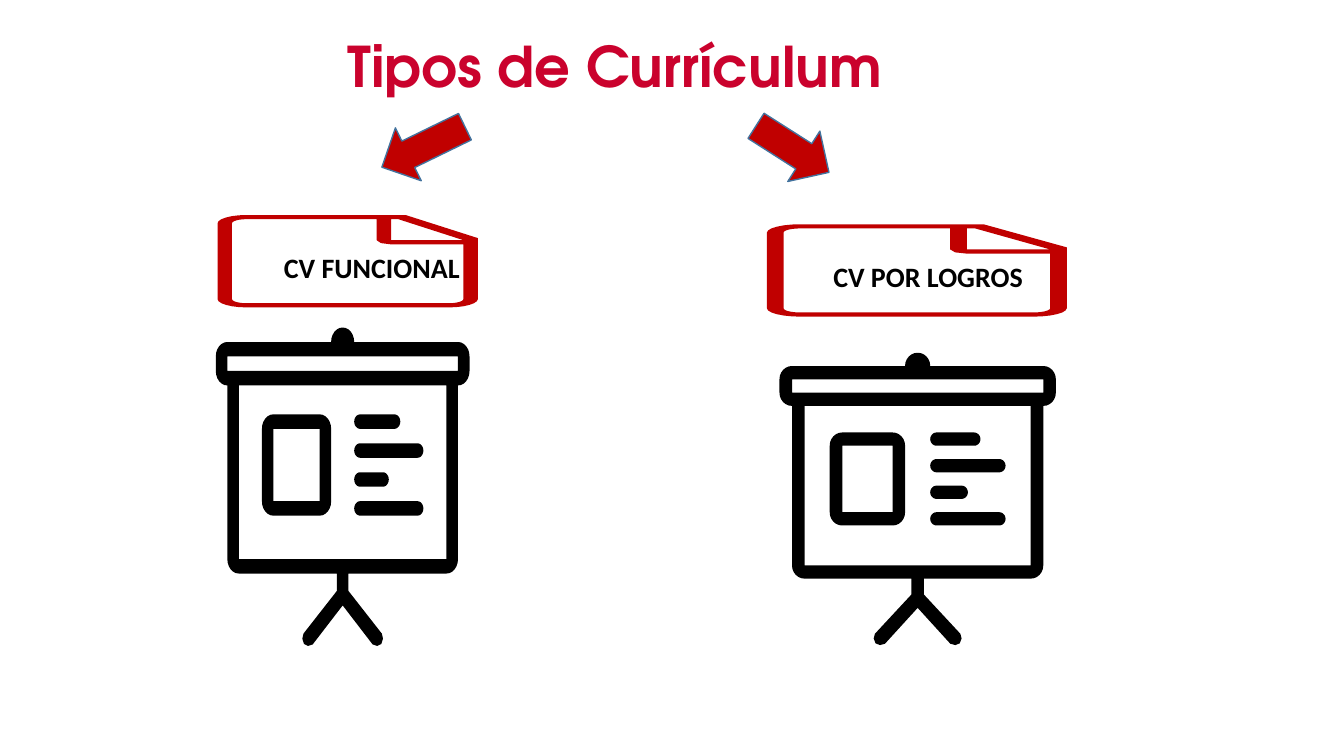
from math import cos, pi, sin

from pptx import Presentation
from pptx.dml.color import RGBColor
from pptx.enum.shapes import MSO_SHAPE
from pptx.enum.text import MSO_ANCHOR, PP_ALIGN
from pptx.util import Emu, Pt

RECT, ARROW = MSO_SHAPE.RECTANGLE, MSO_SHAPE.DOWN_ARROW
TOP, MIDDLE = MSO_ANCHOR.TOP, MSO_ANCHOR.MIDDLE
LEFT, CENTER = PP_ALIGN.LEFT, PP_ALIGN.CENTER

BLACK = RGBColor(0x00, 0x00, 0x00)
WHITE = RGBColor(0xFF, 0xFF, 0xFF)
RED = RGBColor(0xC0, 0x00, 0x00)
ROSE = RGBColor(0xCA, 0x02, 0x2D)
BLUE = RGBColor(0x43, 0x73, 0x9E)

CELL, COLS, ROWS = 76200, 160, 90
FINE = 100
NW, NE, SE, SW = 180, 270, 0, 90

TITLE = {"name": "TeX Gyre Adventor", "size": Pt(40), "bold": True}
LABEL = {"name": "Calibri", "size": Pt(20), "bold": True}


def cells(*counts):
    """Turn grid counts into lengths."""
    return [Emu(round(n * CELL)) for n in counts]


def arc(x, y, r, start):
    """Return a clockwise quarter turn around a centre."""
    turns = [(start + 15 * i) * pi / 180 for i in range(7)]
    return [(x + r * cos(a), y + r * sin(a)) for a in turns]


def pill(l, t, r, b, rad):
    """Return a box outline with round corners."""
    return (arc(l + rad, t + rad, rad, NW) + arc(r - rad, t + rad, rad, NE)
            + arc(r - rad, b - rad, rad, SE) + arc(l + rad, b - rad, rad, SW))


def box(l, t, r, b):
    """Return a box outline with sharp corners."""
    return [(l, t), (r, t), (r, b), (l, b)]


def paint(shape, fill, line=None):
    """Set fill and line, and drop the shadow."""
    shape.shadow.inherit = False
    shape.fill.solid()
    shape.fill.fore_color.rgb = fill
    if line is None:
        shape.line.fill.background()
    else:
        shape.line.color.rgb = line
        shape.line.width = Pt(1)


def write(shape, text, style, color, frame, align):
    """Put one styled line of text in a shape."""
    for key, value in frame.items():
        setattr(shape.text_frame, key, value)
    para = shape.text_frame.paragraphs[0]
    para.alignment = align
    run = para.add_run()
    run.text = text
    for key, value in style.items():
        setattr(run.font, key, value)
    run.font.color.rgb = color


def trace(slide, place, grid, loops, fill):
    """Draw closed loops, given on a local grid, as one shape."""
    x, y, w, h = cells(*place)
    scale = (w / grid[0] / FINE, h / grid[1] / FINE)
    pen = None
    for loop in loops:
        first, *rest = [(round(u * FINE), round(v * FINE)) for u, v in loop]
        if pen is None:
            pen = slide.shapes.build_freeform(*first, scale=scale)
        else:
            pen.move_to(*first)
        pen.add_line_segments(rest, close=True)
    shape = pen.convert_to_shape(x, y)
    paint(shape, fill)
    return shape


def board(slide, place):
    """Draw a flip chart on a grid of 22 by 22."""
    half = (arc(11, 1, 1, NE) + arc(21, 2, 1, NE) + arc(21, 3, 1, SE)
            + arc(20, 16, 1, SE)
            + [(11.5, 17), (11.5, 18.2), (14.4, 21.15), (14.5, 21.5),
               (14.35, 21.87), (14, 22), (13.6, 21.9), (11, 19.2)])
    rim = half + [(22 - x, y) for x, y in reversed(half)]
    bars = [pill(12, 6 + 2 * i, end, 7 + 2 * i, 0.5)
            for i, end in enumerate((16, 18, 15, 18))]
    loops = [rim, box(1, 2, 21, 3), box(2, 4, 20, 16),
             pill(4, 6, 10, 13, 1), box(5, 7, 9, 12), *bars]
    trace(slide, place, (22, 22), loops, BLACK)


def card(slide, place, text):
    """Draw a folded card on a grid of 18 by 22 with its label."""
    rim = (arc(2, 2, 2, NW) + [(13, 0), (18, 5.5)]
           + arc(16, 20, 2, SE) + arc(2, 20, 2, SW))
    hole = (arc(2, 2, 1, NW) + [(11, 1), (11, 6), (11.3, 6.7), (12, 7), (17, 7)]
            + arc(16, 20, 1, SE) + arc(2, 20, 1, SW))
    fold = [(12, 6), (12, 1), (12.5, 1), (17, 6)]
    shape = trace(slide, place, (18, 22), [rim, hole, fold], RED)
    left, top, none = cells(7.9, 4.2, 0)
    frame = {"margin_left": left, "margin_top": top, "margin_right": none,
             "margin_bottom": none, "vertical_anchor": TOP, "word_wrap": True}
    write(shape, text, LABEL, BLACK, frame, LEFT)


def title(slide, place, text):
    """Draw the heading."""
    shape = slide.shapes.add_shape(RECT, *cells(*place))
    paint(shape, WHITE, WHITE)
    frame = {"vertical_anchor": MIDDLE, "word_wrap": True}
    write(shape, text, TITLE, ROSE, frame, CENTER)


def arrow(slide, place, turn):
    """Draw a turned block arrow."""
    shape = slide.shapes.add_shape(ARROW, *cells(*place))
    shape.rotation = turn
    paint(shape, RED, BLUE)


def main():
    """Build the slide and save it."""
    deck = Presentation()
    deck.slide_width, deck.slide_height = cells(COLS, ROWS)
    slide = deck.slides.add_slide(deck.slide_layouts[6])
    board(slide, (25.7, 39, 30.2, 37.9))
    board(slide, (92.8, 42, 32.9, 34.8))
    card(slide, (25.9, 25.6, 31, 11), "CV FUNCIONAL")
    card(slide, (91.3, 26.7, 35.7, 11), "CV POR LOGROS")
    title(slide, (35, 3.6, 76.4, 8.3), "Tipos de Currículum")
    arrow(slide, (46.9, 12, 7, 11), 64)
    arrow(slide, (90.8, 12.6, 7.1, 10.3), 302.5)
    deck.save("out.pptx")


if __name__ == "__main__":
    main()
